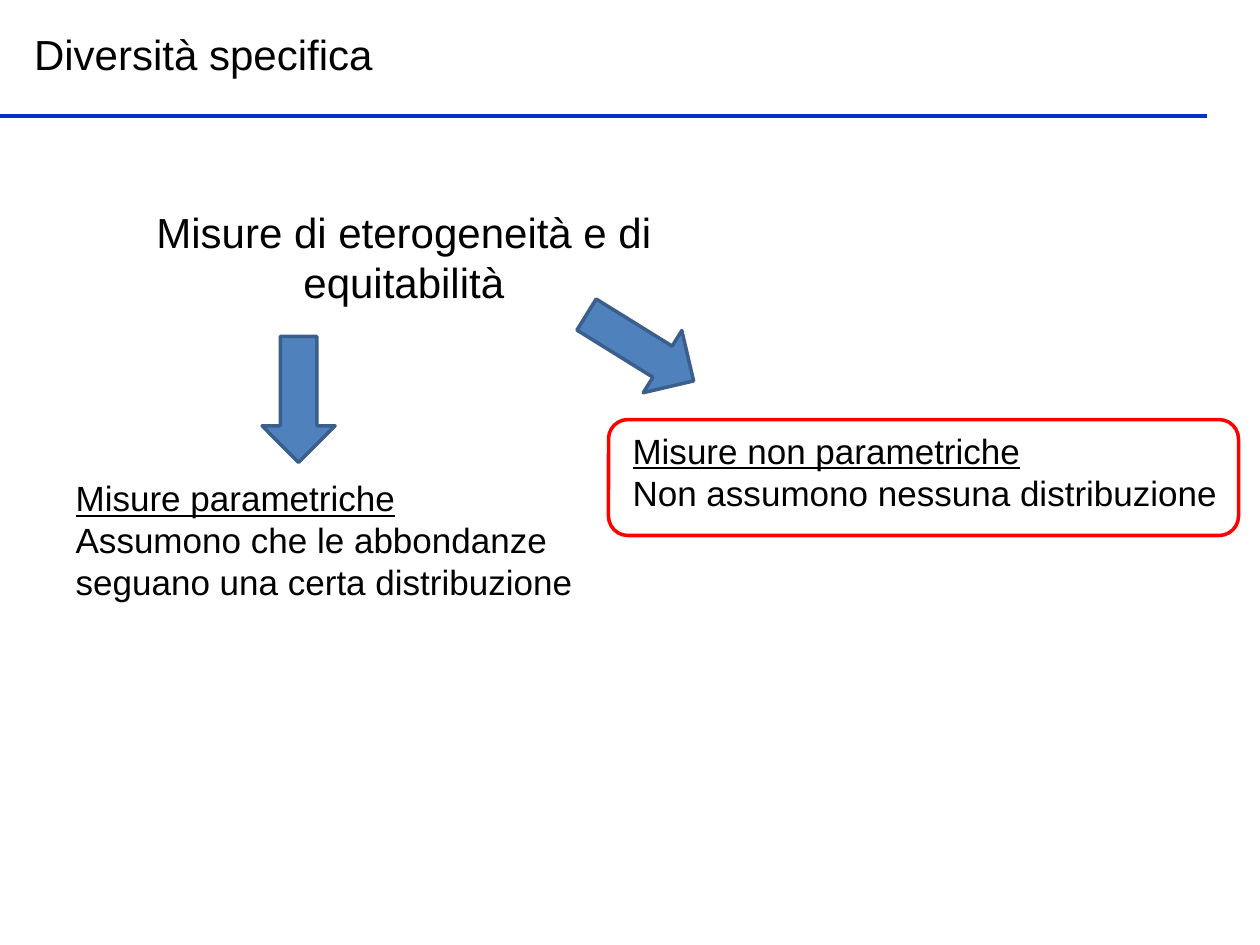
from lxml import etree
from pptx import Presentation
from pptx.dml.color import RGBColor
from pptx.enum import shapes, text
from pptx.oxml import ns
from pptx.util import Inches, Pt

BLACK = "000000"
FRAME_FORMAT = {
    "word_wrap": True,
    "auto_size": text.MSO_AUTO_SIZE.NONE,
    "vertical_anchor": text.MSO_ANCHOR.MIDDLE,
}


def color(hex_value):
    return RGBColor.from_string(hex_value)


def apply_format(target, values):
    for key, value in values.items():
        setattr(target, key, value)


def place(part, box):
    for key, value in zip(("left", "top", "width", "height"), box):
        setattr(part, key, Inches(value))


def outline(part, hex_value):
    part.line.color.rgb = color(hex_value)
    part.line.width = Pt(2)


def write_lines(part, lines, size, align=text.PP_ALIGN.LEFT, underline_first=False):
    frame = part.text_frame
    apply_format(frame, FRAME_FORMAT)
    frame.text = "\n".join(lines)
    for index, paragraph in enumerate(frame.paragraphs):
        apply_format(paragraph, {"alignment": align, "space_before": Pt(0)})
        font = paragraph.runs[0].font
        apply_format(font, {
            "name": "Arial",
            "size": Pt(size),
            "underline": underline_first and index == 0,
        })
        font.color.rgb = color(BLACK)


def add_header(slide, box, rule_y, rule_end):
    title = slide.shapes.title
    place(title, box)
    write_lines(title, ["Diversità specifica"], 24)
    rule = slide.shapes.add_connector(
        shapes.MSO_CONNECTOR.STRAIGHT,
        Inches(0), Inches(rule_y), Inches(rule_end), Inches(rule_y))
    outline(rule, "0332C9")
    etree.SubElement(rule.line._get_or_add_ln().getparent(), ns.qn("a:effectLst"))


def add_topic(slide, box):
    topic = slide.shapes.add_textbox(*map(Inches, box))
    write_lines(topic, ["Misure di eterogeneità e di equitabilità"], 24,
                text.PP_ALIGN.CENTER)


def fill_measure(slide, index, box, lines):
    measure = slide.placeholders[index]
    place(measure, box)
    write_lines(measure, lines, 20, underline_first=True)
    for paragraph in measure.text_frame.paragraphs:
        properties = paragraph._p.get_or_add_pPr()
        properties.set("marL", "0")
        properties.set("indent", "0")
        etree.SubElement(properties, ns.qn("a:buNone"))


def add_arrow(slide, box, rotation=0):
    arrow = slide.shapes.add_shape(shapes.MSO_SHAPE.DOWN_ARROW, *map(Inches, box))
    arrow.shadow.inherit = False
    arrow.rotation = rotation
    arrow.fill.solid()
    arrow.fill.fore_color.rgb = color("4F81BD")
    outline(arrow, "3A5F8C")


def add_highlight(slide, box):
    highlight = slide.shapes.add_shape(
        shapes.MSO_SHAPE.ROUNDED_RECTANGLE, *map(Inches, box))
    highlight.shadow.inherit = False
    highlight.fill.background()
    outline(highlight, "FF0000")


def main():
    deck = Presentation()
    deck.slide_width, deck.slide_height = Inches(10), Inches(7.5)
    slide = deck.slides.add_slide(deck.slide_layouts.get_by_name("Two Content"))
    add_header(slide, (0.17, 0.18, 8.5, 0.5), 0.92, 9.58)
    add_topic(slide, (0.58, 1.58, 5.25, 0.91))
    add_arrow(slide, (2.08, 2.67, 0.58, 1))
    add_arrow(slide, (4.79, 2.26, 0.58, 1), 301.8)
    fill_measure(slide, 1, (0.5, 3.73, 4.83, 1.11), [
        "Misure parametriche",
        "Assumono che le abbondanze seguano una certa distribuzione",
    ])
    fill_measure(slide, 2, (4.92, 3.35, 5.25, 0.78), [
        "Misure non parametriche",
        "Non assumono nessuna distribuzione",
    ])
    add_highlight(slide, (4.83, 3.33, 5, 0.92))
    deck.save("out.pptx")


if __name__ == "__main__":
    main()
